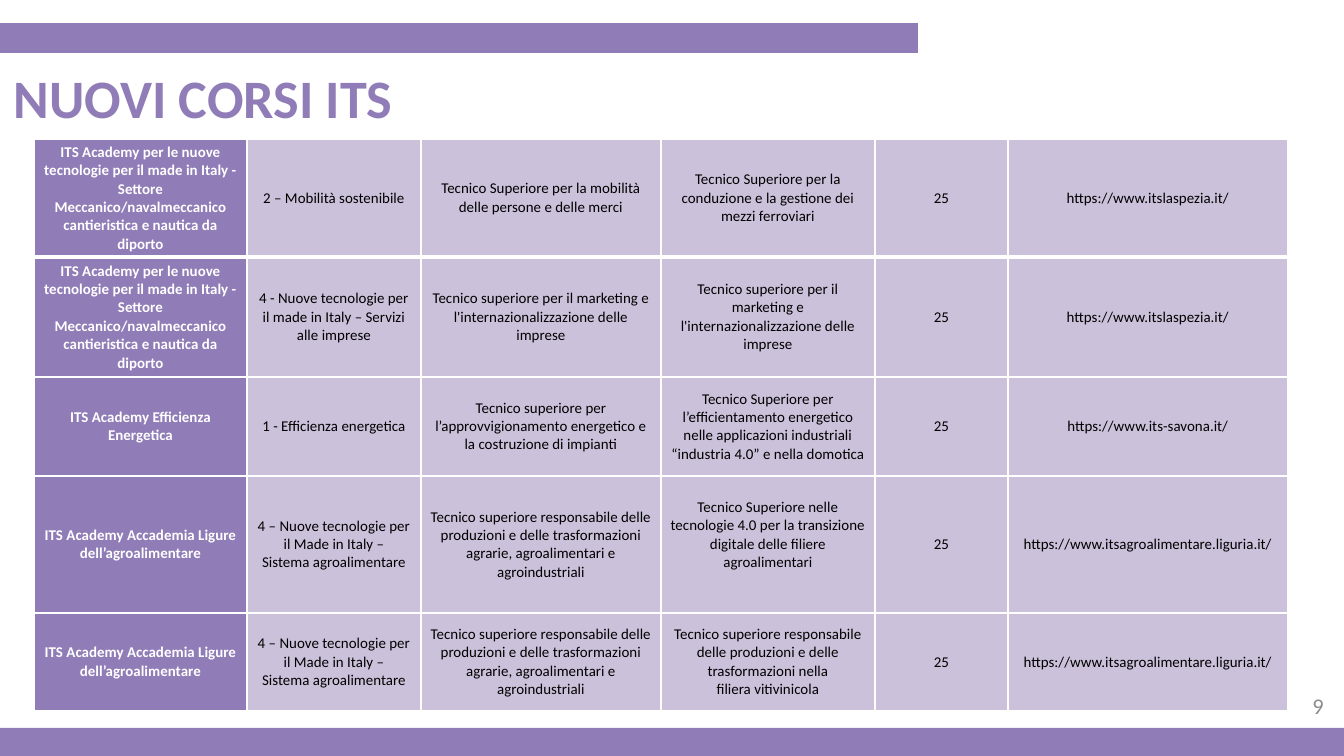
from lxml import etree
from pptx import Presentation
from pptx import util as u
from pptx.dml.color import RGBColor
from pptx.enum import shapes, text
from pptx.oxml.ns import qn

EMU_PER_PX = 914400 / 134.4
FONT = "Calibri"
COLORS = {
    "purple": "907CB7",
    "lilac": "CCC1DA",
    "white": "FFFFFF",
    "black": "000000",
    "grey": "8C8C8C",
}

COLUMN_WIDTHS = [213, 174, 240, 214, 133, 280]
ROW_HEIGHTS = [118, 120, 99, 137, 98]
CELL_MARGIN_X, CELL_MARGIN_Y = 9, 4

LA_SPEZIA = (
    "ITS Academy per le nuove tecnologie per il made in Italy - Settore "
    "Meccanico/navalmeccanico cantieristica e nautica da diporto"
)
AGRIFOOD = "ITS Academy Accademia Ligure dell’agroalimentare"
AGRIFOOD_AREA = "4 – Nuove tecnologie per il Made in Italy –\nSistema agroalimentare"
MARKETING = "Tecnico superiore per il marketing e l'internazionalizzazione delle imprese"
PRODUCTION = "Tecnico superiore responsabile delle produzioni e delle trasformazioni"
LA_SPEZIA_SITE = "https://www.itslaspezia.it/"
AGRIFOOD_SITE = "https://www.itsagroalimentare.liguria.it/"
PLACES = "25"

COURSES = [
    [LA_SPEZIA, "2 – Mobilità sostenibile",
     "Tecnico Superiore per la mobilità delle persone e delle merci",
     "Tecnico Superiore per la conduzione e la gestione dei mezzi ferroviari",
     PLACES, LA_SPEZIA_SITE],
    [LA_SPEZIA, "4 - Nuove tecnologie per il made in Italy – Servizi alle imprese",
     MARKETING, MARKETING, PLACES, LA_SPEZIA_SITE],
    ["ITS Academy Efficienza Energetica", "1 - Efficienza energetica",
     "Tecnico superiore per l’approvvigionamento energetico e la costruzione di impianti",
     "Tecnico Superiore per l’efficientamento energetico nelle applicazioni "
     "industriali “industria 4.0” e nella domotica",
     PLACES, "https://www.its-savona.it/"],
    [AGRIFOOD, AGRIFOOD_AREA,
     PRODUCTION + " agrarie, agroalimentari e agroindustriali",
     "Tecnico Superiore nelle tecnologie 4.0 per la transizione digitale "
     "delle filiere agroalimentari",
     PLACES, AGRIFOOD_SITE],
    [AGRIFOOD, AGRIFOOD_AREA,
     PRODUCTION + "\nagrarie, agroalimentari e agroindustriali",
     PRODUCTION + " nella\nfiliera vitivinicola",
     PLACES, AGRIFOOD_SITE],
]


def px(length):
    return u.Emu(round(length * EMU_PER_PX))


def rgb(name):
    return RGBColor.from_string(COLORS[name])


def format_text(frame, size, color, align, bold=False):
    frame.word_wrap = True
    frame.vertical_anchor = text.MSO_ANCHOR.MIDDLE
    for paragraph in frame.paragraphs:
        paragraph.alignment = align
        for run in paragraph.runs:
            run.font.name = FONT
            run.font.size = u.Pt(size)
            run.font.bold = bold
            run.font.color.rgb = rgb(color)


def add_bar(slide, top, width, height):
    bar = slide.shapes.add_shape(
        shapes.MSO_SHAPE.RECTANGLE, 0, px(top), px(width), px(height))
    bar.shadow.inherit = False
    bar.fill.solid()
    bar.fill.fore_color.rgb = rgb("purple")
    bar.line.fill.background()


def set_title(slide, wording):
    title = slide.shapes.title
    title.left, title.top, title.width, title.height = px(0), px(54), px(918), px(85)
    title.text_frame.text = wording
    format_text(title.text_frame, 29, "purple", text.PP_ALIGN.LEFT, bold=True)


def add_page_number(slide, number):
    box = slide.shapes.add_textbox(px(1262), px(686), px(75), px(40))
    box.text_frame.text = str(number)
    format_text(box.text_frame, 12, "grey", text.PP_ALIGN.RIGHT)


def set_borders(cell, widths):
    """Draw white borders; widths maps side letters L, R, T, B to points."""
    properties = cell._tc.get_or_add_tcPr()
    for side, width in widths.items():
        line = etree.SubElement(properties, qn(f"a:ln{side}"), w=str(u.Pt(width)))
        fill = etree.SubElement(line, qn("a:solidFill"))
        etree.SubElement(fill, qn("a:srgbClr"), val=COLORS["white"])


def fill_cell(cell, wording, is_school, borders):
    cell.text_frame.text = wording
    cell.margin_left = cell.margin_right = px(CELL_MARGIN_X)
    cell.margin_top = cell.margin_bottom = px(CELL_MARGIN_Y)
    format_text(cell.text_frame, 8, "white" if is_school else "black",
                text.PP_ALIGN.CENTER, bold=is_school)
    cell.vertical_anchor = text.MSO_ANCHOR.MIDDLE
    set_borders(cell, borders)
    cell.fill.solid()
    cell.fill.fore_color.rgb = rgb("purple" if is_school else "lilac")


def add_course_table(slide):
    table = slide.shapes.add_table(
        len(ROW_HEIGHTS), len(COLUMN_WIDTHS), px(34), px(139),
        px(sum(COLUMN_WIDTHS)), px(sum(ROW_HEIGHTS))).table
    table.first_row = table.horz_banding = False
    for column, width in zip(table.columns, COLUMN_WIDTHS):
        column.width = px(width)
    for row, height in zip(table.rows, ROW_HEIGHTS):
        row.height = px(height)
    for r, course in enumerate(COURSES):
        borders = {"L": 1, "R": 1, "T": 3 if r == 1 else 1, "B": 3 if r == 0 else 1}
        for c, wording in enumerate(course):
            fill_cell(table.cell(r, c), wording, c == 0, borders)
    # The digital transition course sits one line higher than its neighbours.
    table.cell(3, 3).margin_bottom = px(CELL_MARGIN_Y + 19)


def main():
    deck = Presentation()
    deck.slide_width, deck.slide_height = px(1344), px(756)
    slide = deck.slides.add_slide(deck.slide_layouts[5])
    add_bar(slide, 23, 918, 30)
    add_bar(slide, 728, 1344, 28)
    set_title(slide, "NUOVI CORSI ITS")
    add_page_number(slide, 9)
    add_course_table(slide)
    deck.save("out.pptx")


if __name__ == "__main__":
    main()
